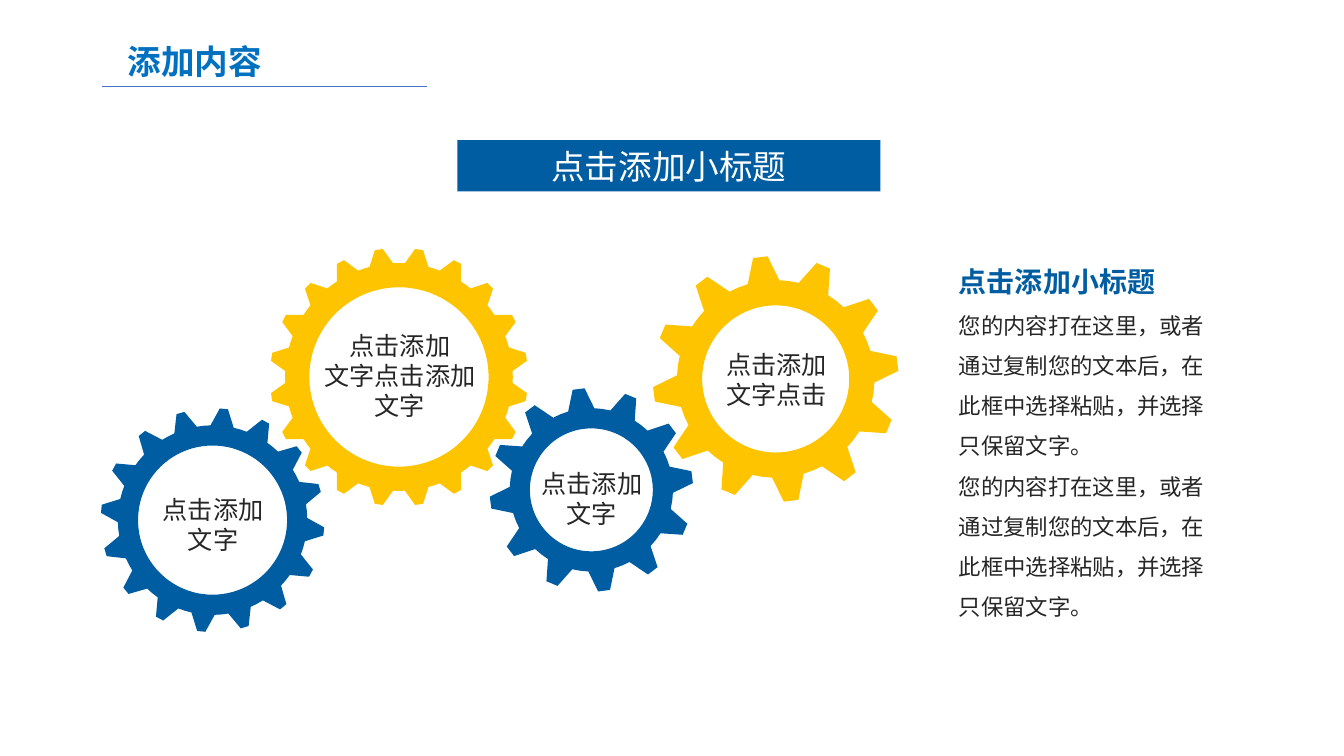
from math import cos, radians, sin

from lxml.etree import SubElement
from pptx import Presentation
from pptx.dml.color import RGBColor
from pptx.enum.shapes import MSO_CONNECTOR, MSO_SHAPE
from pptx.enum.text import MSO_ANCHOR, PP_ALIGN
from pptx.oxml.ns import qn
from pptx.util import Pt

PX = 9144  # EMU per px, 100 px to the inch
FONT = "Noto Sans CJK SC"
COLORS = {
    "blue": "005DA2",
    "yellow": "FFC400",
    "heading": "0070C0",
    "rule": "4472C4",
    "ink": "262626",
    "white": "FFFFFF",
}


def ring_point(center, radius, angle):
    """Point at a clockwise angle in degrees from the top, in EMU."""
    x, y = center
    turn = radians(angle)
    return (round((x + radius * sin(turn)) * PX),
            round((y - radius * cos(turn)) * PX))


class SlideBuilder:
    def __init__(self, deck):
        self.page = deck.slides.add_slide(deck.slide_layouts[6])
        self.shapes = self.page.shapes

    def color(self, name):
        return RGBColor.from_string(COLORS[name])

    def paint(self, shape, fill):
        shape.shadow.inherit = False
        shape.fill.solid()
        shape.fill.fore_color.rgb = self.color(fill)
        shape.line.fill.background()

    def fill_text(self, frame, lines, align, anchor, spacing=None):
        """Each line is (text, size, color, bold)."""
        frame.vertical_anchor = anchor
        for index, (text, size, color, bold) in enumerate(lines):
            para = frame.paragraphs[0] if index == 0 else frame.add_paragraph()
            para.alignment = align
            if spacing:
                para.line_spacing = spacing
            span = para.add_run()
            span.text = text
            span.font.size = Pt(size)
            span.font.bold = bold
            span.font.color.rgb = self.color(color)
            span.font.name = FONT
            SubElement(span.font._element, qn("a:ea"), typeface=FONT)

    def text(self, area, lines, align=PP_ALIGN.CENTER, anchor=MSO_ANCHOR.MIDDLE,
             spacing=None, wrap=True):
        box = self.shapes.add_textbox(*(length * PX for length in area))
        box.text_frame.word_wrap = wrap
        self.fill_text(box.text_frame, lines, align, anchor, spacing)

    def banner(self, area, fill, line):
        box = self.shapes.add_shape(
            MSO_SHAPE.RECTANGLE, *(length * PX for length in area))
        self.paint(box, fill)
        self.fill_text(box.text_frame, [line], PP_ALIGN.CENTER, MSO_ANCHOR.MIDDLE)

    def rule(self, left, right, y, color):
        line = self.shapes.add_connector(
            MSO_CONNECTOR.STRAIGHT, left * PX, y * PX, right * PX, y * PX)
        line.line.color.rgb = self.color(color)
        line.line.width = Pt(0.5)
        SubElement(line._element.spPr, qn("a:effectLst"))

    def gear(self, center, radii, teeth, phase, half_tip, half_base, fill):
        outer, root, hole = radii
        step = 360 / teeth
        profile = [(root, -half_base), (outer, -half_tip), (outer, half_tip),
                   (root, half_base), (root, step / 2)]
        rim = [ring_point(center, radius, phase + tooth * step + offset)
               for tooth in range(teeth) for radius, offset in profile]
        bore = [ring_point(center, hole, -angle) for angle in range(0, 360, 4)]
        builder = self.shapes.build_freeform(*rim[0], scale=1.0)
        builder.add_line_segments(rim[1:], close=True)
        builder.move_to(*bore[0])
        builder.add_line_segments(bore[1:], close=True)
        self.paint(builder.convert_to_shape(), fill)


def main():
    deck = Presentation()
    deck.slide_width, deck.slide_height = 1334 * PX, 750 * PX
    slide = SlideBuilder(deck)

    # Page heading
    slide.rule(101, 424, 86, "rule")
    slide.text((116, 36, 155, 50), [("添加内容", 24, "heading", True)],
               anchor=MSO_ANCHOR.TOP, wrap=False)

    # Gears: center, (outer, root, hole), teeth, phase, half tip, half base, fill
    gears = [
        ((396, 374), (128, 113, 89), 20, 9, 1.8, 6, "yellow"),
        ((587, 486), (101, 81, 61), 12, -7.2, 3.4, 9.3, "blue"),
        ((211, 516), (111, 94, 74), 16, 5.8, 2.1, 7.1, "blue"),
        ((770, 376), (122, 98, 73), 12, -7.2, 3.4, 9.3, "yellow"),
    ]
    for gear in gears:
        slide.gear(*gear)

    # Gear labels
    labels = [
        ((150, 485, 123, 71), ["点击添加", "文字"]),
        ((310, 322, 174, 101), ["点击添加", "文字点击添加", "文字"]),
        ((526, 459, 123, 71), ["点击添加", "文字"]),
        ((684, 341, 174, 71), ["点击添加", "文字点击"]),
    ]
    for area, rows in labels:
        slide.text(area, [(row, 18, "ink", False) for row in rows])

    # Banner
    slide.banner((454, 139, 420, 51), "blue",
                 ("点击添加小标题", 24, "white", False))

    # Side text
    body = ("您的内容打在这里，或者通过复制您的文本后，"
            "在此框中选择粘贴，并选择只保留文字。")
    slide.text((942, 241, 283, 384),
               [("点击添加小标题", 20, "blue", True)]
               + [(body, 16, "ink", False)] * 2,
               align=PP_ALIGN.LEFT, anchor=MSO_ANCHOR.TOP, spacing=1.5)

    deck.save("out.pptx")


if __name__ == "__main__":
    main()
